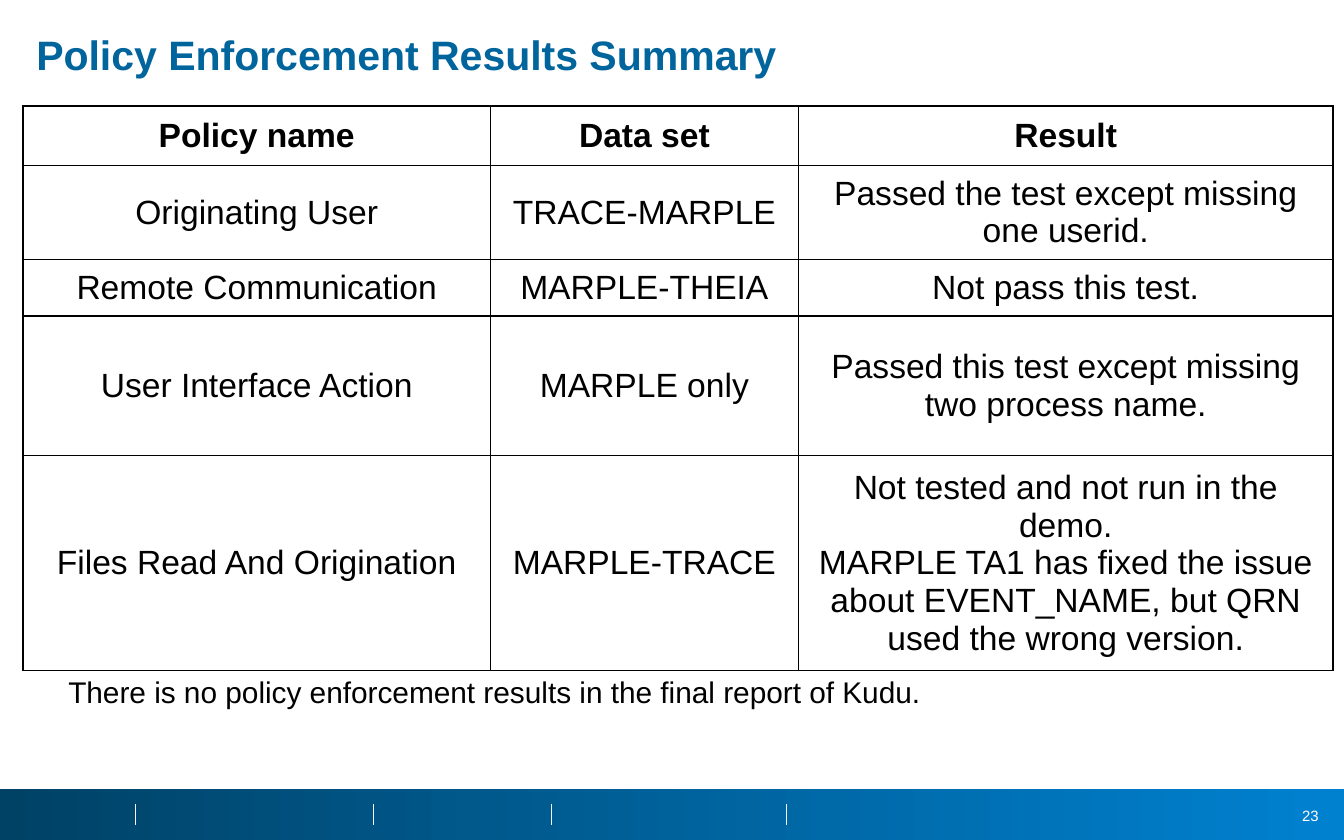
from lxml.etree import SubElement
from pptx import Presentation
from pptx.dml.color import RGBColor
from pptx.enum.shapes import MSO_CONNECTOR, MSO_SHAPE
from pptx.enum.text import MSO_ANCHOR, MSO_AUTO_SIZE, PP_ALIGN
from pptx.oxml.ns import qn
from pptx.util import Inches, Pt

TITLE = "Policy Enforcement Results Summary"
ROWS = [
    ("Policy name", "Data set", "Result"),
    ("Originating User", "TRACE-MARPLE", "Passed the test except missing one userid."),
    ("Remote Communication", "MARPLE-THEIA", "Not pass this test."),
    ("User Interface Action", "MARPLE only", "Passed this test except missing two process name."),
    ("Files Read And Origination", "MARPLE-TRACE",
     "Not tested and not run in the demo.\n"
     "MARPLE TA1 has fixed the issue about EVENT_NAME, but QRN used the wrong version."),
]
NOTE = "There is no policy enforcement results in the final report of Kudu."
PAGE = "23"
COLORS = {"title": "00649D", "text": "000000", "white": "FFFFFF",
          "bar_start": "004266", "bar_end": "0081D0", "divider": "F2F2F2"}
WIDTH, HEIGHT, BAR_HEIGHT = 10, 6.25, 0.38
COL_WIDTHS = [3.48, 2.29, 3.98]
ROW_HEIGHTS = [0.44, 0.66, 0.42, 1.04, 1.5]
DIVIDERS = [1.01, 2.78, 4.1, 5.85]


def color(name):
    return RGBColor.from_string(COLORS[name])


def box(x, y, w, h):
    return Inches(x), Inches(y), Inches(w), Inches(h)


def style(tf, size, name, bold=False, align=PP_ALIGN.LEFT):
    for p in tf.paragraphs:
        p.alignment = align
        for r in p.runs:
            r.font.name, r.font.size, r.font.bold = "Arial", Pt(size), bold
            r.font.color.rgb = color(name)


def add_border(cell):
    props = cell._tc.get_or_add_tcPr()
    for i, side in enumerate(("lnL", "lnR", "lnT", "lnB")):
        ln = props.makeelement(qn(f"a:{side}"), {"w": str(Pt(1))})
        fill = SubElement(ln, qn("a:solidFill"))
        SubElement(fill, qn("a:srgbClr"), val=COLORS["text"])
        props.insert(i, ln)


def add_footer(s):
    bar = s.shapes.add_shape(MSO_SHAPE.RECTANGLE, *box(0, HEIGHT - BAR_HEIGHT, WIDTH, BAR_HEIGHT))
    bar.shadow.inherit = False
    bar.line.fill.background()
    bar.fill.gradient()
    bar.fill.gradient_angle = 0
    for stop, name in zip(bar.fill.gradient_stops, ("bar_start", "bar_end")):
        stop.color.rgb = color(name)
    number = s.shapes.add_textbox(*box(9.49, 5.95, 0.42, 0.24))
    tf = number.text_frame
    tf.word_wrap = True
    tf.vertical_anchor = MSO_ANCHOR.MIDDLE
    tf.text = PAGE
    style(tf, 8, "white", align=PP_ALIGN.RIGHT)
    for x in DIVIDERS:
        line = s.shapes.add_connector(MSO_CONNECTOR.STRAIGHT, Inches(x), Inches(5.98),
                                      Inches(x), Inches(6.14))
        line.line.color.rgb = color("divider")
        line.line.width = Pt(0.25)
        SubElement(line._element.spPr, qn("a:effectLst"))


def add_title(s):
    title = s.shapes.title
    title.left, title.top, title.width, title.height = box(0.17, 0.21, 9.83, 0.36)
    tf = title.text_frame
    tf.text = TITLE
    tf.auto_size = MSO_AUTO_SIZE.NONE
    tf.vertical_anchor = MSO_ANCHOR.TOP
    tf.paragraphs[0].line_spacing = 0.9
    style(tf, 22, "title", bold=True)


def add_results(s):
    frame = s.shapes.add_table(len(ROWS), len(COL_WIDTHS),
                               *box(0.17, 0.79, sum(COL_WIDTHS), sum(ROW_HEIGHTS)))
    table = frame.table
    for col, w in zip(table.columns, COL_WIDTHS):
        col.width = Inches(w)
    for i, (row, h) in enumerate(zip(table.rows, ROW_HEIGHTS)):
        row.height = Inches(h)
        for cell, text in zip(row.cells, ROWS[i]):
            cell.text = text
            cell.vertical_anchor = MSO_ANCHOR.MIDDLE
            cell.margin_left = cell.margin_right = Inches(0.05)
            cell.margin_top = cell.margin_bottom = Inches(0.05)
            cell.fill.background()
            add_border(cell)
            style(cell.text_frame, 18, "text", bold=i == 0, align=PP_ALIGN.CENTER)


def add_note(s):
    tf = s.shapes.add_textbox(*box(0.41, 4.96, 6.57, 0.37)).text_frame
    tf.word_wrap = False
    tf.text = NOTE
    style(tf, 16, "text")


def main():
    prs = Presentation()
    prs.slide_width, prs.slide_height = Inches(WIDTH), Inches(HEIGHT)
    s = prs.slides.add_slide(prs.slide_layouts[5])
    add_footer(s)
    add_title(s)
    add_results(s)
    add_note(s)
    prs.save("out.pptx")


if __name__ == "__main__":
    main()
